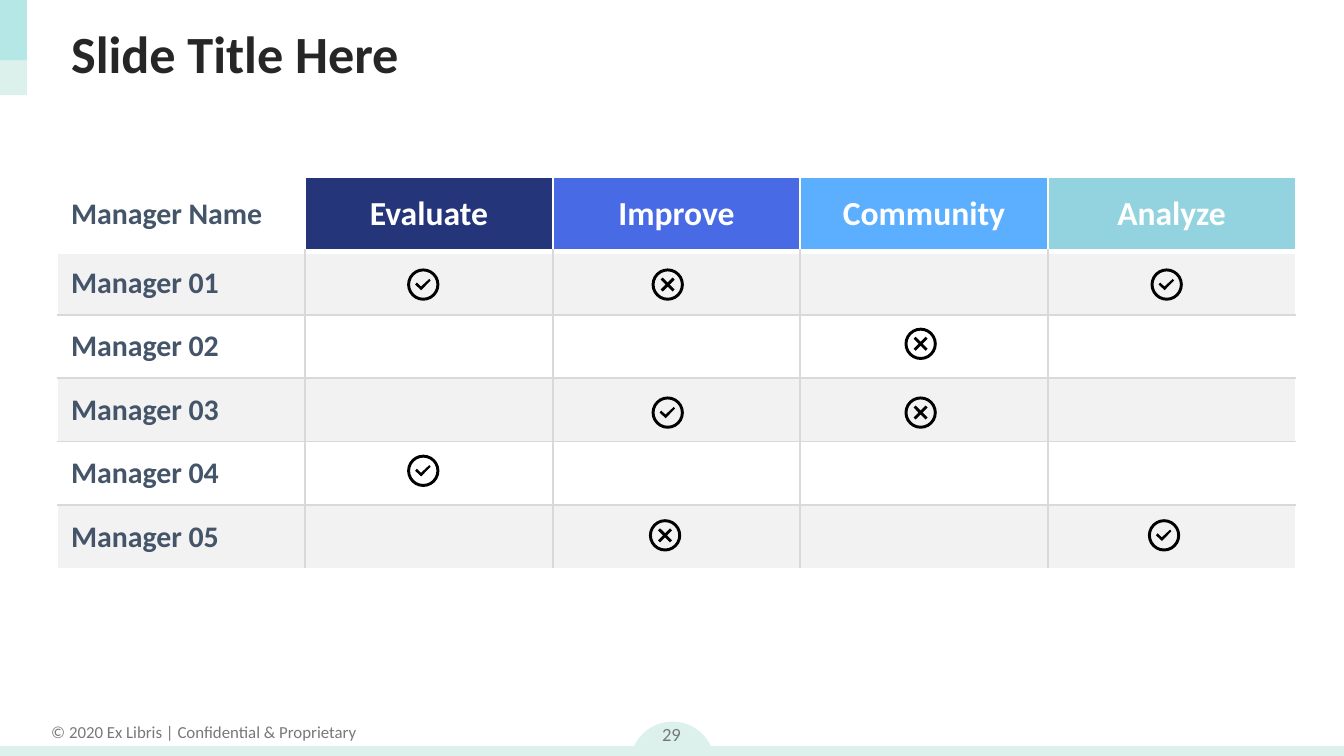
from collections import namedtuple
from dataclasses import dataclass

from lxml.etree import SubElement as Sub
from pptx import Presentation
from pptx.dml.color import RGBColor as Rgb
from pptx.enum.shapes import MSO_SHAPE as Kind
from pptx.enum.text import MSO_ANCHOR as Anchor, MSO_AUTO_SIZE as Fit, PP_ALIGN as Align
from pptx.oxml.ns import qn
from pptx.util import Cm, Pt

Box = namedtuple("Box", "x y w h")


@dataclass(frozen=True)
class Theme:
    font: str = "Calibri"
    mint: str = "DCF1EC"
    aqua: str = "50CFDA"
    ink: str = "262626"
    slate: str = "445469"
    gray: str = "787878"
    rule: str = "D9D9D9"
    band: str = "F2F2F2"
    white: str = "FFFFFF"
    black: str = "000000"
    heads: tuple = ("24357A", "486AE5", "5CAFFF", "92D3DF")
    title: int = 28
    head: int = 18
    label: int = 16
    page: int = 10
    note: int = 9


T = Theme()
HEADS = ["Manager Name", "Evaluate", "Improve", "Community", "Analyze"]
NAMES = [f"Manager {n:02}" for n in range(1, 6)]
COLS = [6.91, 11.53, 16.31, 20.96]
ROWS = [2.03, 3.15, 4.45, 5.55, 6.77]
MARKS = ["vx.v", "..x.", ".vx.", "v...", ".x.v"]
NUDGE = [0, 0, 0, 0, -0.05]
SIZE = 0.61
RINGS = [12, 9.8]
TICK = [(5.5, -3), (-1.5, 4.2), (-6, 0), (-4.8, -1.5), (-1.7, 1.5), (4.5, -4.2)]
ARM = [(1.5, 0), (5.2, 3.7), (3.7, 5.2)]


def sub(box, x, y, w, h):
    return Box(box.x + x, box.y + y, w, h)


def paint(shape, color):
    shape.shadow.inherit = False
    shape.fill.solid()
    shape.fill.fore_color.rgb = Rgb.from_string(color)
    shape.line.fill.background()


def block(slide, kind, box, color):
    shape = slide.shapes.add_shape(kind, *map(Cm, box))
    paint(shape, color)
    return shape


def write(frame, text, size, color, align, bold=False):
    para = frame.paragraphs[0]
    para.alignment = align
    run = para.add_run()
    run.text = text
    font = run.font
    font.name, font.size, font.bold = T.font, Pt(size), bold
    font.color.rgb = Rgb.from_string(color)


def label(slide, box, text, size, anchor, wrap):
    frame = slide.shapes.add_textbox(*map(Cm, box)).text_frame
    frame.word_wrap = wrap
    frame.vertical_anchor = anchor
    write(frame, text, size, T.gray, Align.CENTER)


def side(slide, box):
    block(slide, Kind.RECTANGLE, box, T.mint)
    top = block(slide, Kind.RECTANGLE, sub(box, 0, 0, box.w, 1.14), T.aqua)
    tint = top.fill._xPr.find(qn("a:solidFill"))[0]
    Sub(tint, qn("a:alpha"), val="27000")


def foot(slide, box):
    block(slide, Kind.OVAL, sub(box, 11.91, 0.28, 1.6, 1.6), T.mint)
    label(slide, sub(box, 0.69, 0.15, 6.32, 0.64),
          "© 2020 Ex Libris | Confidential & Proprietary", T.note, Anchor.TOP, False)
    block(slide, Kind.RECTANGLE, sub(box, 0, 0.74, box.w, 0.28), T.mint)
    label(slide, sub(box, 11.94, 0, 1.5, 1.02), "29", T.page, Anchor.MIDDLE, True)


def head(slide, box):
    title = slide.shapes.title
    title.left, title.top, title.width, title.height = map(Cm, box)
    frame = title.text_frame
    frame.auto_size = Fit.NONE
    frame.vertical_anchor = Anchor.MIDDLE
    write(frame, "Slide Title Here", T.title, T.ink, Align.LEFT, True)


def edge(cell, row, col):
    plain = row == 0
    lines = {
        "lnL": (plain or col == 0, 1),
        "lnR": (plain or col == len(COLS), 1),
        "lnT": (row <= 1, 3 if row == 1 else 1),
        "lnB": (plain or row == len(ROWS), 3 if plain else 1),
    }
    props = cell._tc.get_or_add_tcPr()
    for tag, (blank, width) in lines.items():
        line = Sub(props, qn("a:" + tag), w=str(int(Pt(width))))
        fill = Sub(line, qn("a:solidFill"))
        Sub(fill, qn("a:srgbClr"), val=T.white if blank else T.rule)


def grid(slide, box):
    shape = slide.shapes.add_table(len(NAMES) + 1, len(HEADS), *map(Cm, box))
    table = shape.table
    for col in table.columns:
        col.width = Cm(box.w / len(HEADS))
    for r, row in enumerate(table.rows):
        row.height = Cm(1.2 if r else 1.4)
        for c, cell in enumerate(row.cells):
            cell.vertical_anchor = Anchor.MIDDLE
            edge(cell, r, c)
            if r == c == 0:
                cell.fill.background()
            else:
                tone = (T.band if r % 2 else T.white) if r else T.heads[c - 1]
                cell.fill.solid()
                cell.fill.fore_color.rgb = Rgb.from_string(tone)
            if c == 0:
                text = NAMES[r - 1] if r else HEADS[0]
                write(cell.text_frame, text, T.label, T.slate, Align.LEFT, True)
            elif r == 0:
                write(cell.text_frame, HEADS[c], T.head, T.white, Align.CENTER, True)


def spin(points):
    turned = []
    for _ in range(4):
        turned += points
        points = [(-y, x) for x, y in points]
    return turned


def bend(shape, unit):
    lines = list(shape._element.iter(qn("a:lnTo")))
    for n, line in enumerate(lines[:4 * len(RINGS)]):
        size = str(round(RINGS[n // 4] * unit))
        start = str((n + 1) % 4 * 5400000)
        arc = line.getparent().makeelement(
            qn("a:arcTo"), {"wR": size, "hR": size, "stAng": start, "swAng": "5400000"})
        line.getparent().replace(line, arc)


def icon(slide, box, sign):
    unit = Cm(box.w) / 24
    loops = [spin([(0, r)]) + [(0, r)] for r in RINGS] + [sign]
    loops = [[(x * unit, y * unit) for x, y in loop] for loop in loops]
    pen = slide.shapes.build_freeform(*loops[0][0], scale=1.0)
    pen.add_line_segments(loops[0][1:], close=True)
    for loop in loops[1:]:
        pen.move_to(*loop[0])
        pen.add_line_segments(loop[1:], close=True)
    shape = pen.convert_to_shape(Cm(box.x + box.w / 2), Cm(box.y + box.h / 2))
    bend(shape, unit)
    paint(shape, T.black)


def marks(slide, box):
    signs = {"v": TICK, "x": spin(ARM)}
    for y, line, shift in zip(ROWS, MARKS, NUDGE):
        for x, key in zip(COLS, line):
            if key in signs:
                spot = sub(box, x + shift - SIZE / 2, y - SIZE / 2, SIZE, SIZE)
                icon(slide, spot, signs[key])


def main():
    deck = Presentation()
    deck.slide_width, deck.slide_height = Cm(25.4), Cm(14.29)
    slide = deck.slides.add_slide(deck.slide_layouts[5])
    foot(slide, Box(0, 13.36, 25.4, 1.02))
    side(slide, Box(0, 0, 0.51, 1.8))
    head(slide, Box(1.09, 0.2, 23.39, 1.6))
    area = Box(1.09, 3.35, 23.39, 7.4)
    grid(slide, area)
    marks(slide, area)
    deck.save("out.pptx")


if __name__ == "__main__":
    main()
